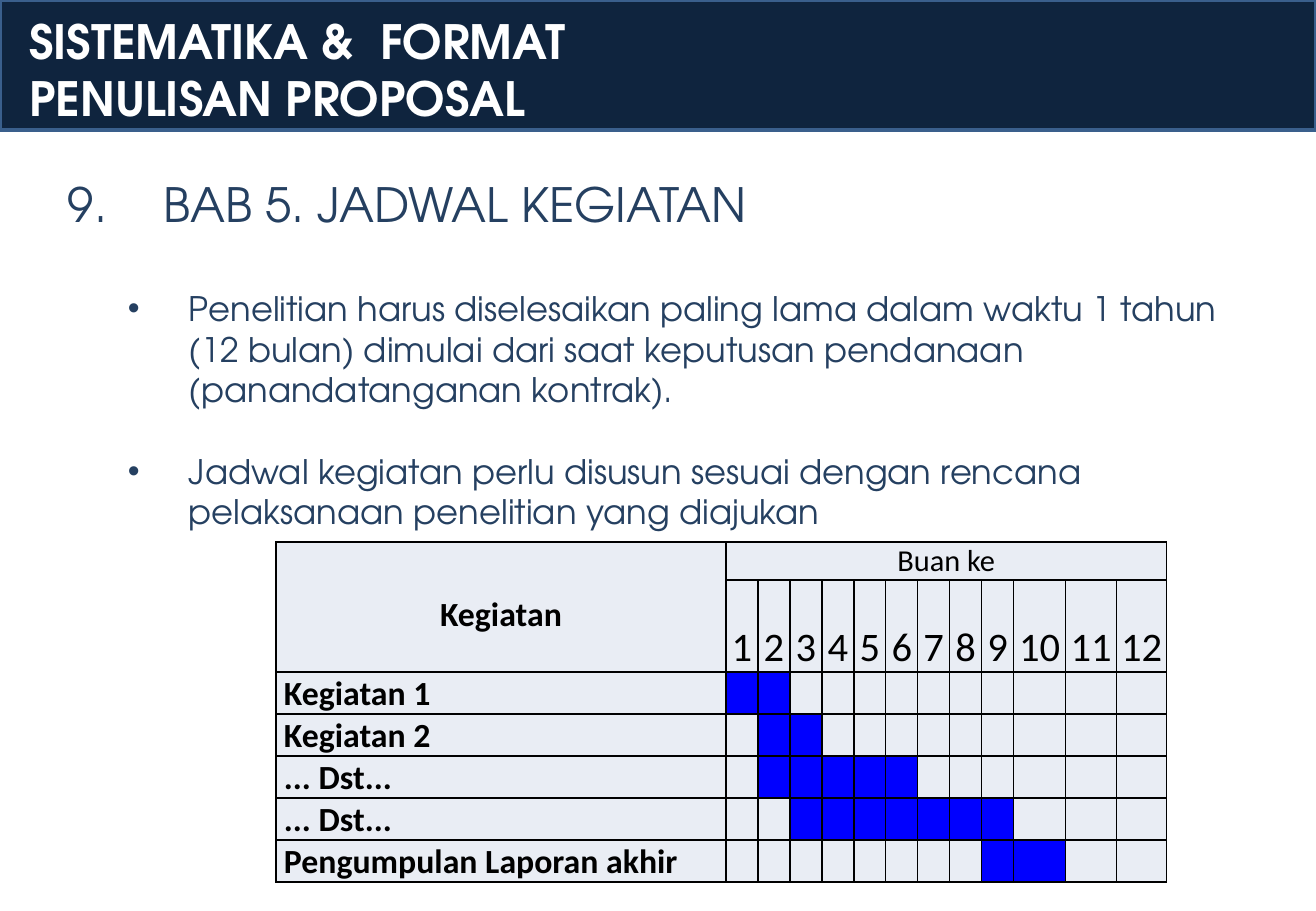
from lxml import etree
from pptx import Presentation
from pptx.dml.color import RGBColor
from pptx.enum.shapes import MSO_SHAPE
from pptx.enum.text import MSO_ANCHOR, MSO_AUTO_SIZE, PP_ALIGN
from pptx.oxml.ns import qn
from pptx.util import Pt

EMU_PER_PX = 914400 / 121.5
RECT = MSO_SHAPE.RECTANGLE
TOP, MIDDLE, BOTTOM = MSO_ANCHOR.TOP, MSO_ANCHOR.MIDDLE, MSO_ANCHOR.BOTTOM
LEFT, CENTER = PP_ALIGN.LEFT, PP_ALIGN.CENTER
NO_FIT = MSO_AUTO_SIZE.NONE

NAVY = RGBColor(0x0F, 0x24, 0x3E)
EDGE_BLUE = RGBColor(0x3A, 0x5F, 0x8C)
TEXT_BLUE = RGBColor(0x25, 0x40, 0x61)
WHITE = RGBColor(0xFF, 0xFF, 0xFF)
BLACK = RGBColor(0x00, 0x00, 0x00)
CELL_GREY = RGBColor(0xE9, 0xED, 0xF4)
BAR_BLUE = RGBColor(0x00, 0x00, 0xFF)

HEADING_FONT = "TeX Gyre Adventor"
TABLE_FONT = "Calibri"

TITLE_LINES = ["SISTEMATIKA &  FORMAT", "PENULISAN PROPOSAL"]
NUMBER = ("buAutoNum", {"type": "arabicPeriod", "startAt": "9"})
BULLET = ("buChar", {"char": "•"})
BODY = [
    ("BAB 5. JADWAL KEGIATAN", 28, 0, 96, -96, 0, NUMBER),
    ("Penelitian harus diselesaikan paling lama dalam waktu 1 tahun (12 bulan) "
     "dimulai dari saat keputusan pendanaan (panandatanganan kontrak).",
     20, 1, 121, -61, 56, BULLET),
    ("Jadwal kegiatan perlu disusun sesuai dengan rencana pelaksanaan "
     "penelitian yang diajukan", 20, 1, 121, -61, 41, BULLET),
]
ACTIVITIES = [
    ("Kegiatan 1", 1, 2),
    ("Kegiatan 2", 2, 3),
    ("... Dst...", 2, 6),
    ("... Dst...", 3, 9),
    ("Pengumpulan Laporan akhir", 9, 10),
]
COLUMNS = [450] + [32] * 9 + [52, 51, 50]
ROWS = [38, 92] + [42] * len(ACTIVITIES)


def px(value):
    """Turn pixels into EMU."""
    return round(value * EMU_PER_PX)


def apply(target, values):
    """Set each named attribute on the target."""
    for name, value in values.items():
        setattr(target, name, value)


class SlideBuilder:
    """Holds the text style and the current slide."""

    def __init__(self, s, font, colour):
        """Keep the slide with its default font and colour."""
        self.s, self.font, self.colour = s, font, colour

    def run(self, p, text, size, **style):
        """Add one formatted run."""
        r = p.add_run()
        r.text = text
        colour = style.pop("colour", self.colour)
        apply(r.font, {"name": self.font, "size": Pt(size), "bold": False, **style})
        r.font.color.rgb = colour

    def title(self, lines, x, y, w, h):
        """Place and fill the title placeholder."""
        sp = self.s.shapes.title
        apply(sp, {"left": px(x), "top": px(y), "width": px(w), "height": px(h)})
        tf = sp.text_frame
        apply(tf, {"word_wrap": False, "auto_size": NO_FIT, "vertical_anchor": TOP})
        for i, line in enumerate(lines):
            p = tf.add_paragraph() if i else tf.paragraphs[0]
            p.alignment = LEFT
            self.run(p, line, 28, bold=True, colour=WHITE)

    def band(self, x, y, w, h):
        """Draw the header band behind the title."""
        sp = self.s.shapes.add_shape(RECT, px(x), px(y), px(w), px(h))
        sp.shadow.inherit = False
        sp.fill.solid()
        sp.fill.fore_color.rgb = NAVY
        sp.line.color.rgb = EDGE_BLUE
        sp.line.width = Pt(2)
        self.s.shapes.title._element.addprevious(sp._element)

    def outline(self, items, x, y, w, h):
        """Add a text box of numbered and bulleted paragraphs."""
        tf = self.s.shapes.add_textbox(px(x), px(y), px(w), px(h)).text_frame
        tf.word_wrap = True
        for i, (text, size, level, margin, indent, gap, mark) in enumerate(items):
            p = tf.add_paragraph() if i else tf.paragraphs[0]
            p.level = level
            if gap:
                p.space_before = px(gap)
            pPr = p._p.get_or_add_pPr()
            pPr.set("marL", str(px(margin)))
            pPr.set("indent", str(px(indent)))
            tag, attributes = mark
            if mark is BULLET:
                etree.SubElement(pPr, qn("a:buFont"), typeface="Arial")
            etree.SubElement(pPr, qn(f"a:{tag}"), attributes)
            self.run(p, text, size)

    def table(self, columns, rows, x, y):
        """Add a grid of plain bordered cells."""
        table = self.s.shapes.add_table(
            len(rows), len(columns), px(x), px(y), px(sum(columns)), px(sum(rows))).table
        apply(table, {"first_row": False, "horz_banding": False})
        for column, width in zip(table.columns, columns):
            column.width = px(width)
        for row, height in zip(table.rows, rows):
            row.height = px(height)
        for cell in table.iter_cells():
            apply(cell, {"margin_left": px(1), "margin_right": px(1), "margin_top": px(1),
                         "margin_bottom": 0, "vertical_anchor": BOTTOM})
            self.borders(cell)
            self.fill(cell, CELL_GREY)
        return table

    def borders(self, cell):
        """Give a cell thin black borders on all sides."""
        tcPr = cell._tc.get_or_add_tcPr()
        for side in ("lnL", "lnR", "lnT", "lnB"):
            line = etree.SubElement(tcPr, qn(f"a:{side}"), w=str(Pt(1)))
            fill = etree.SubElement(line, qn("a:solidFill"))
            etree.SubElement(fill, qn("a:srgbClr"), val=str(BLACK))

    def fill(self, cell, colour):
        """Fill a cell with a solid colour."""
        cell.fill.solid()
        cell.fill.fore_color.rgb = colour

    def label(self, cell, text, size, align=CENTER, bold=False):
        """Write text into a table cell."""
        p = cell.text_frame.paragraphs[0]
        p.alignment = align
        self.run(p, text, size, name=TABLE_FONT, colour=BLACK, bold=bold)

    def schedule(self, x, y):
        """Build the activity schedule by month."""
        table = self.table(COLUMNS, ROWS, x, y)
        activity, months = table.cell(0, 0), table.cell(0, 1)
        activity.merge(table.cell(1, 0))
        months.merge(table.cell(0, 12))
        apply(activity, {"vertical_anchor": MIDDLE, "margin_top": px(16)})
        self.label(activity, "Kegiatan", 20, bold=True)
        self.label(months, "Buan ke", 18)
        for month in range(1, 13):
            self.label(table.cell(1, month), str(month), 24)
        for row, (name, first, last) in enumerate(ACTIVITIES, 2):
            cell = table.cell(row, 0)
            cell.margin_left = px(8)
            self.label(cell, name, 20, LEFT, True)
            for month in range(first, last + 1):
                self.fill(table.cell(row, month), BAR_BLUE)


def main():
    """Build and save the slide."""
    prs = Presentation()
    prs.slide_width, prs.slide_height = px(1316), px(911)
    s = prs.slides.add_slide(prs.slide_layouts[5])
    builder = SlideBuilder(s, HEADING_FONT, TEXT_BLUE)
    builder.band(0, 0, 1316, 130)
    builder.title(TITLE_LINES, 17, 6, 631, 126)
    builder.outline(BODY, 56, 169, 1186, 372)
    builder.schedule(276, 542)
    prs.save("out.pptx")


if __name__ == "__main__":
    main()
